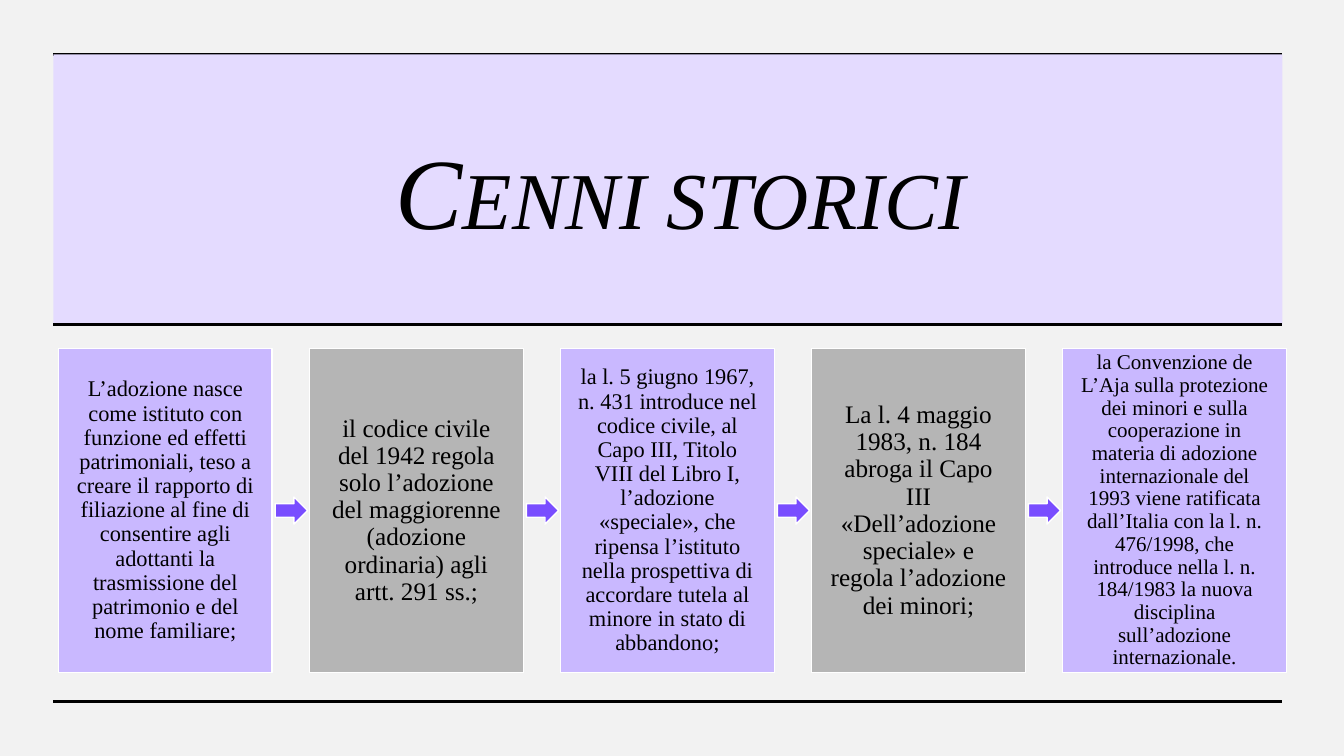
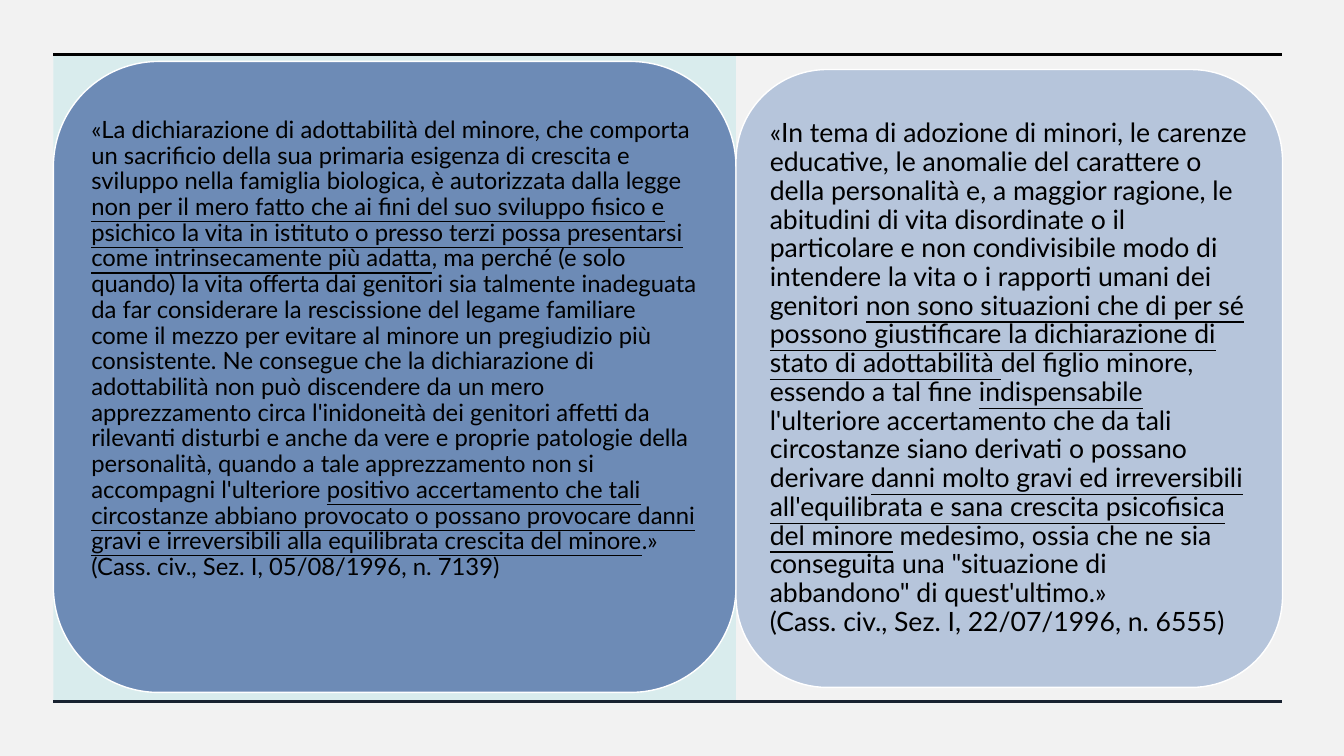
import pptx
import pptx.dml.color
import pptx.enum.shapes
import pptx.enum.text
import pptx.oxml.ns
import pptx.util
from lxml import etree

Inches = pptx.util.Inches
Pt = pptx.util.Pt
SHAPES = pptx.enum.shapes.MSO_SHAPE
ALIGN = pptx.enum.text.PP_ALIGN
ANCHOR = pptx.enum.text.MSO_ANCHOR

PAPER, WHITE, BLACK, NAVY = "F2F2F2", "FFFFFF", "000000", "182230"
LILAC, PALE_LILAC, VIOLET, GREY = "C9B8FF", "E4DBFF", "794DFF", "B5B5B5"
TEAL, BLUE, PALE_BLUE = "00BAC8", "6D8BB6", "B6C5DB"
SERIF, SANS = "Times New Roman", "Lato"

# Frame shared by both slides
LEFT, TOP, WIDTH, BOTTOM = 0.53, 0.54, 12.19, 6.96

# Text, size and card width
STEPS = [
    ("L’adozione nasce come istituto con funzione ed effetti patrimoniali, "
     "teso a creare il rapporto di filiazione al fine di consentire agli "
     "adottanti la trasmissione del patrimonio e del nome familiare;", 16, 2.12),
    ("il codice civile del 1942 regola solo l’adozione del maggiorenne "
     "(adozione ordinaria) agli artt. 291 ss.;", 18, 2.12),
    ("la l. 5 giugno 1967, n. 431 introduce nel codice civile, al Capo III, "
     "Titolo VIII del Libro I, l’adozione «speciale», che ripensa l’istituto "
     "nella prospettiva di accordare tutela al minore in stato di abbandono;",
     16, 2.12),
    ("La l. 4 maggio 1983, n. 184 abroga il Capo III «Dell’adozione speciale» "
     "e regola l’adozione dei minori;", 18, 2.12),
    ("la Convenzione de L’Aja sulla protezione dei minori e sulla cooperazione "
     "in materia di adozione internazionale del 1993 viene ratificata "
     "dall’Italia con la l. n. 476/1998, che introduce nella l. n. 184/1983 la "
     "nuova disciplina sull’adozione internazionale.", 15, 2.22),
]

# Each paragraph is a list of spans that alternate plain and underlined
RULING_7139 = [
    ["«La dichiarazione di adottabilità del minore, che comporta un sacrificio "
     "della sua primaria esigenza di crescita e sviluppo nella famiglia "
     "biologica, è autorizzata dalla legge ",
     "non per il mero fatto che ai fini del suo sviluppo fisico e psichico la "
     "vita in istituto o presso terzi possa presentarsi come intrinsecamente "
     "più adatta",
     ", ma perché (e solo quando) la vita offerta dai genitori sia talmente "
     "inadeguata da far considerare la rescissione del legame familiare come "
     "il mezzo per evitare al minore un pregiudizio più consistente. Ne "
     "consegue che la dichiarazione di adottabilità non può discendere da un "
     "mero apprezzamento circa l'inidoneità dei genitori affetti da rilevanti "
     "disturbi e anche da vere e proprie patologie della personalità, quando a "
     "tale apprezzamento non si accompagni l'ulteriore ",
     "positivo accertamento che tali circostanze abbiano provocato o possano "
     "provocare danni gravi e irreversibili alla equilibrata crescita del "
     "minore",
     ".»"],
    ["(Cass. civ., Sez. I, 05/08/1996, n. 7139)"],
]
RULING_6555 = [
    ["«In tema di adozione di minori, le carenze educative, le anomalie del "
     "carattere o della personalità e, a maggior ragione, le abitudini di vita "
     "disordinate o il particolare e non condivisibile modo di intendere la "
     "vita o i rapporti umani dei genitori ",
     "non sono situazioni che di per sé possono giustificare la dichiarazione "
     "di stato di adottabilità ",
     "del figlio minore, essendo a tal fine ",
     "indispensabile ",
     "l'ulteriore accertamento che da tali circostanze siano derivati o "
     "possano derivare ",
     "danni molto gravi ed irreversibili all'equilibrata e sana crescita "
     "psicofisica del minore",
     " medesimo, ossia che ne sia conseguita una \"situazione di abbandono\" "
     "di quest'ultimo.»"],
    ["(Cass. civ., Sez. I, 22/07/1996, n. 6555)"],
]


def rgb(value):
    return pptx.dml.color.RGBColor.from_string(value)


def apply(target, formats):
    for name, value in formats.items():
        setattr(target, name, value)


def paint(shape, color):
    shape.fill.solid()
    shape.fill.fore_color.rgb = rgb(color)


def add_page(deck, layout):
    page = deck.slides.add_slide(deck.slide_layouts[layout])
    page.background.fill.solid()
    page.background.fill.fore_color.rgb = rgb(PAPER)
    return page


def add_rule(page, y, color=BLACK):
    """Draw a horizontal line across the frame."""
    rule = page.shapes.add_connector(
        pptx.enum.shapes.MSO_CONNECTOR.STRAIGHT,
        Inches(LEFT), Inches(y), Inches(LEFT + WIDTH), Inches(y))
    rule.line.color.rgb = rgb(color)
    rule.line.width = Pt(2.25)
    etree.SubElement(rule._element.spPr, pptx.oxml.ns.qn("a:effectLst"))


def add_block(page, kind, box, color, outline=WHITE):
    block = page.shapes.add_shape(kind, *map(Inches, box))
    block.shadow.inherit = False
    paint(block, color)
    if outline:
        block.line.color.rgb = rgb(outline)
        block.line.width = Pt(1)
    else:
        block.line.fill.background()
    return block


def write(shape, paragraphs, size, font, align, insets):
    """Fill a shape with text; insets are side, top and bottom."""
    frame = shape.text_frame
    side, top, bottom = map(Inches, insets)
    apply(frame, {
        "word_wrap": True, "vertical_anchor": ANCHOR.MIDDLE,
        "margin_left": side, "margin_right": side,
        "margin_top": top, "margin_bottom": bottom})
    for index, spans in enumerate(paragraphs):
        para = frame.add_paragraph() if index else frame.paragraphs[0]
        apply(para, {"alignment": align, "line_spacing": 0.9})
        for position, text in enumerate(spans):
            span = para.add_run()
            span.text = text
            apply(span.font, {"name": font, "size": Pt(size),
                              "underline": position % 2 == 1})
            span.font.color.rgb = rgb(BLACK)


def place_title(page, text, box):
    title = page.shapes.title
    apply(title, dict(zip(("left", "top", "width", "height"),
                          map(Inches, box))))
    paint(title, PALE_LILAC)
    apply(title.text_frame, {
        "word_wrap": True, "vertical_anchor": ANCHOR.MIDDLE,
        "auto_size": pptx.enum.text.MSO_AUTO_SIZE.NONE,
        "margin_left": Inches(0.35), "margin_right": Inches(0.1)})
    para = title.text_frame.paragraphs[0]
    para.alignment = ALIGN.CENTER
    span = para.add_run()
    span.text = text
    apply(span.font, {"name": SERIF, "size": Pt(72), "italic": True})
    span.font.color.rgb = rgb(BLACK)
    span._r.get_or_add_rPr().set("cap", "small")
    # Bring the band in front of the rule above it
    page.shapes.element.append(title.element)


def add_steps(page, left, top, height):
    """Lay out the row of cards with an arrow between neighbours."""
    pitch, arrow_width, arrow_height = 2.49, 0.32, 0.27
    for index, (text, size, width) in enumerate(STEPS):
        x = left + index * pitch
        card = add_block(page, SHAPES.RECTANGLE, (x, top, width, height),
                         GREY if index % 2 else LILAC)
        write(card, [[text]], size, SERIF, ALIGN.CENTER, (0.17, 0.02, 0.02))
        if index < len(STEPS) - 1:
            add_block(page, SHAPES.RIGHT_ARROW,
                      (x + width + 0.03, top + (height - arrow_height) / 2,
                       arrow_width, arrow_height), VIOLET)


def add_ruling(page, box, color, paragraphs, size, insets):
    panel = add_block(page, SHAPES.ROUNDED_RECTANGLE, box, color)
    write(panel, paragraphs, size, SANS, ALIGN.LEFT, insets)


def add_tint(page, box):
    """Add a translucent panel."""
    tint = add_block(page, SHAPES.RECTANGLE, box, TEAL, outline=None)
    color = tint._element.spPr.find(".//" + pptx.oxml.ns.qn("a:srgbClr"))
    etree.SubElement(color, pptx.oxml.ns.qn("a:alpha"), val="10000")


def build_history(deck):
    page = add_page(deck, 5)
    title_height = 2.68
    add_rule(page, TOP)
    place_title(page, "Cenni storici", (LEFT, TOP, WIDTH, title_height))
    add_rule(page, TOP + title_height)
    add_rule(page, BOTTOM)
    add_steps(page, 0.58, 3.46, 3.21)


def build_rulings(deck):
    page = add_page(deck, 6)
    split = 6.77
    add_tint(page, (LEFT, TOP, split, BOTTOM - TOP))
    add_ruling(page, (LEFT, 0.61, split, 6.26), BLUE, RULING_7139, 17,
               (0.07, 0.07, 0.62))
    add_rule(page, TOP)
    add_ruling(page, (LEFT + split, 0.69, WIDTH - split, 6.13), PALE_BLUE,
               RULING_6555, 19, (0.07, 0.08, 0.08))
    add_rule(page, BOTTOM, NAVY)


def main():
    deck = pptx.Presentation()
    apply(deck, {"slide_width": Inches(13.33), "slide_height": Inches(7.5)})
    build_history(deck)
    build_rulings(deck)
    deck.save("out.pptx")


if __name__ == "__main__":
    main()
